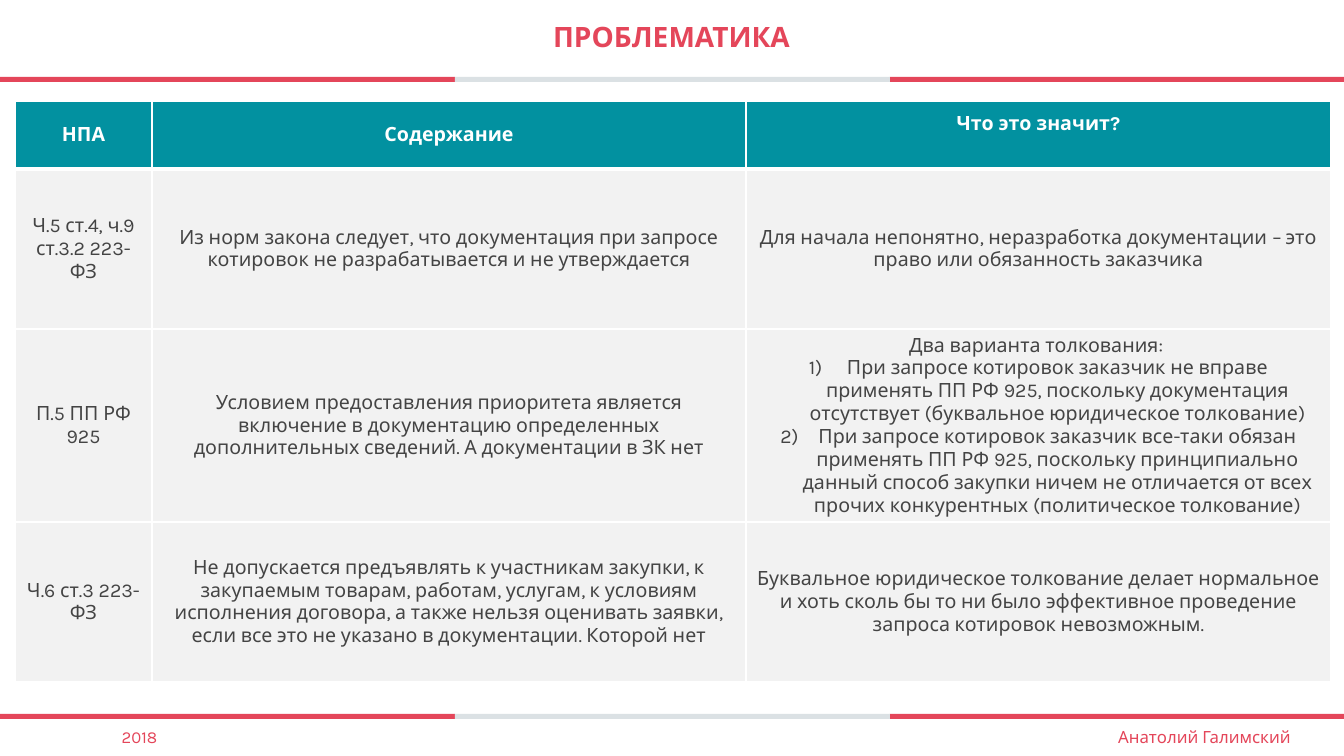
from dataclasses import dataclass

from lxml import etree
from pptx import Presentation
from pptx.dml.color import RGBColor
from pptx.enum.shapes import MSO_SHAPE
from pptx.enum.text import MSO_ANCHOR, PP_ALIGN
from pptx.oxml.ns import qn
from pptx.util import Pt

RECT = MSO_SHAPE.RECTANGLE
MIDDLE = MSO_ANCHOR.MIDDLE
CENTER = PP_ALIGN.CENTER
EMU_PER_PX = 12192000 / 1344


@dataclass
class Theme:
    font: str = "Karla"
    red: str = "E4465A"
    grey: str = "DBE1E4"
    teal: str = "0291A0"
    cell: str = "F2F2F2"
    text: str = "444444"
    white: str = "FFFFFF"
    title_size: int = 20
    table_size: int = 14
    caption_size: int = 12


theme = Theme()


def px(n):
    return round(n * EMU_PER_PX)


def add_text(p, text, size, color, bold=False):
    p.alignment = CENTER
    r = p.add_run()
    r.text = text
    r.font.name = theme.font
    r.font.size = Pt(size)
    r.font.bold = bold
    r.font.color.rgb = RGBColor.from_string(color)


prs = Presentation()
prs.slide_width, prs.slide_height = px(1344), px(756)
s = prs.slides.add_slide(prs.slide_layouts[5])

# Striped rules above and below the table
stripes = [(0, 455, theme.red), (890, 454, theme.red), (455, 435, theme.grey)]
for top in (77, 714):
    for left, width, color in stripes:
        sp = s.shapes.add_shape(RECT, px(left), px(top), px(width), px(5))
        sp.shadow.inherit = False
        sp.fill.solid()
        sp.fill.fore_color.rgb = RGBColor.from_string(color)
        sp.line.fill.background()

# Title
title = s.shapes.title
title.left, title.top, title.width, title.height = px(216), px(0), px(911), px(76)
tf = title.text_frame
tf.vertical_anchor = MIDDLE
tf.paragraphs[0].line_spacing = 0.9
add_text(tf.paragraphs[0], "ПРОБЛЕМАТИКА", theme.title_size, theme.red, True)

# Table: each cell is a list of paragraphs, those after the first are numbered
rows = [
    [["НПА"], ["Содержание"], ["Что это значит?"]],
    [
        ["Ч.5 ст.4, ч.9 ст.3.2 223-ФЗ"],
        ["Из норм закона следует, что документация при запросе котировок "
         "не разрабатывается и не утверждается"],
        ["Для начала непонятно, неразработка документации – это право "
         "или обязанность заказчика"],
    ],
    [
        ["П.5 ПП РФ 925"],
        ["Условием предоставления приоритета является включение в документацию "
         "определенных дополнительных сведений. А документации в ЗК нет"],
        ["Два варианта толкования: ",
         "При запросе котировок заказчик не вправе применять ПП РФ 925, "
         "поскольку документация отсутствует (буквальное юридическое толкование)",
         "При запросе котировок заказчик все-таки обязан применять ПП РФ 925, "
         "поскольку принципиально данный способ закупки ничем не отличается "
         "от всех прочих конкурентных (политическое толкование)"],
    ],
    [
        ["Ч.6 ст.3 223-ФЗ"],
        ["Не допускается предъявлять к участникам закупки, к закупаемым товарам, "
         "работам, услугам, к условиям исполнения договора, а также нельзя оценивать "
         "заявки, если все это не указано в документации. Которой нет"],
        ["Буквальное юридическое толкование делает нормальное и хоть сколь бы то "
         "ни было эффективное проведение запроса котировок невозможным."],
    ],
]
col_widths = [137, 594, 585]
row_heights = [68, 160, 193, 160]
table = s.shapes.add_table(len(rows), len(col_widths), px(15), px(101),
                           px(sum(col_widths)), px(sum(row_heights))).table
for column, width in zip(table.columns, col_widths):
    column.width = px(width)
for row, height in zip(table.rows, row_heights):
    row.height = px(height)

for i, row in enumerate(rows):
    header = i == 0
    for j, paragraphs in enumerate(row):
        cell = table.cell(i, j)
        cell.vertical_anchor = MIDDLE
        # White borders, thicker under the header
        tcPr = cell._tc.get_or_add_tcPr()
        for side in ("lnL", "lnR", "lnT", "lnB"):
            thick = (i, side) in ((0, "lnB"), (1, "lnT"))
            ln = etree.SubElement(tcPr, qn("a:" + side), w=str(Pt(3 if thick else 1)))
            fill = etree.SubElement(ln, qn("a:solidFill"))
            etree.SubElement(fill, qn("a:srgbClr"), val=theme.white)
        cell.fill.solid()
        cell.fill.fore_color.rgb = RGBColor.from_string(theme.teal if header else theme.cell)
        tf = cell.text_frame
        for k, text in enumerate(paragraphs):
            p = tf.paragraphs[0] if k == 0 else tf.add_paragraph()
            if k > 0:
                pPr = p._p.get_or_add_pPr()
                pPr.set("marL", str(px(38)))
                pPr.set("indent", str(-px(38)))
                etree.SubElement(pPr, qn("a:buFont"), typeface="+mj-lt")
                etree.SubElement(pPr, qn("a:buAutoNum"), type="arabicParenR")
            add_text(p, text, theme.table_size,
                     theme.white if header else theme.text, header)

# The last heading sits above the middle of its cell
table.cell(0, 2).margin_bottom = px(28)

# Footer captions
for left, text in ((1065, "Анатолий Галимский"), (0, "2018")):
    tf = s.shapes.add_textbox(px(left), px(722), px(279), px(30)).text_frame
    tf.word_wrap = True
    add_text(tf.paragraphs[0], text, theme.caption_size, theme.red)

prs.save("out.pptx")
